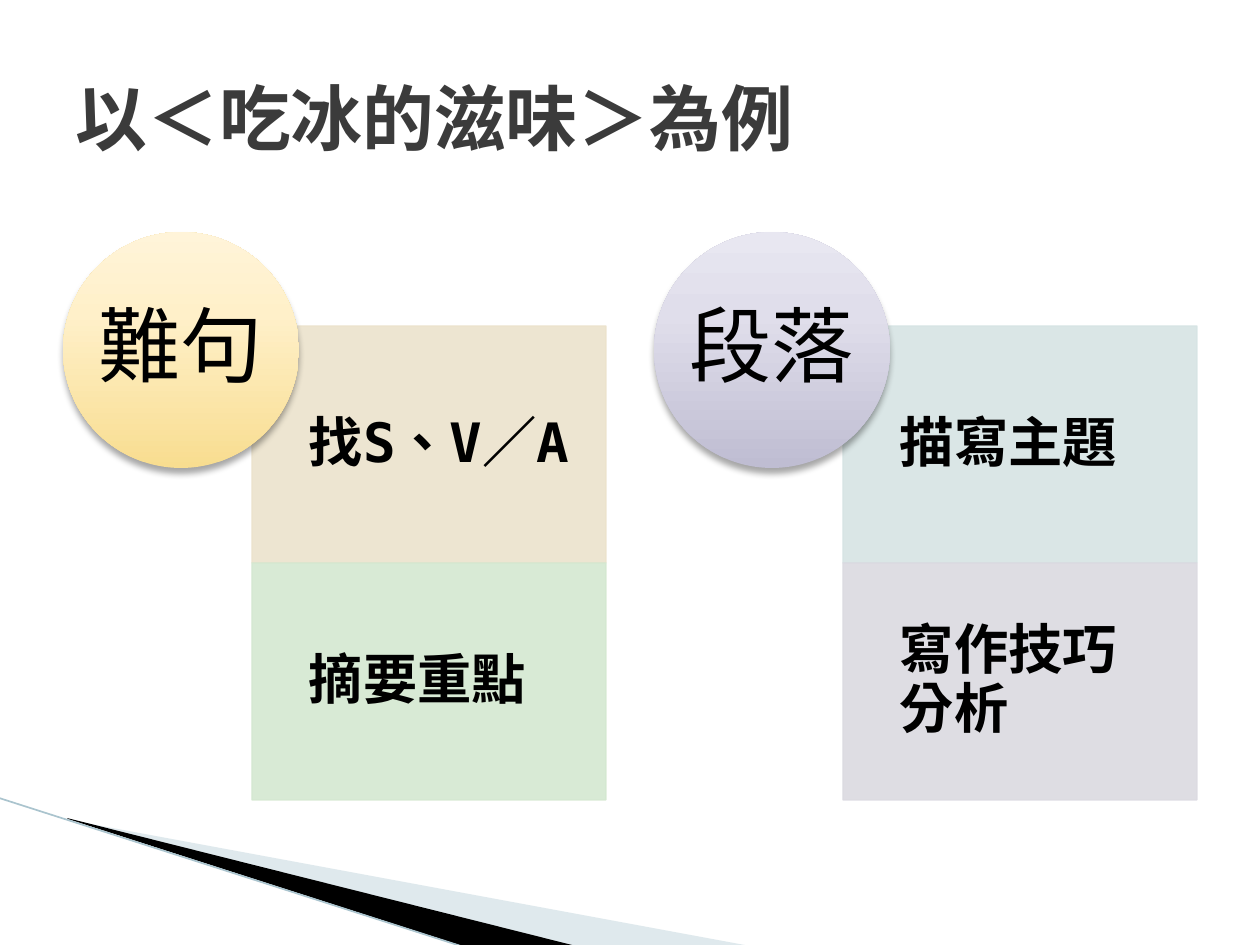
"""Build a slide that pairs two reading topics with their analysis steps."""
from copy import deepcopy

from lxml import etree
from pptx import Presentation
from pptx import util as u
from pptx.dml.color import RGBColor
from pptx.enum import lang, shapes, text
from pptx.oxml.ns import qn

TITLE = "以＜吃冰的滋味＞為例"
TOPICS = [
    {"name": "難句", "glow": ["F8DD90", "FFF0C9", "FFF4D9"],
     "steps": [("找S、V／A", "ECE3CC"), ("摘要重點", "D4E8D1")]},
    {"name": "段落", "glow": ["BFBDD2", "E0DEEB", "E8E7F1"],
     "steps": [("描寫主題", "D6E4E4"), ("寫作技巧分析", "DBDAE1")]},
]
WEDGES = [
    {"points": [(69, 820), (750, 946), (575, 946), (69, 819)], "color": "B1C9D2", "alpha": 40},
    {"points": [(67, 818), (576, 946), (469, 948), (68, 819)], "color": "000000", "alpha": 100},
]
EDGE = (-1, 798, 467, 948)
THEME = {
    "font": "DejaVu Sans Mono", "ink": "000000", "title_ink": "3B3B3B", "edge": "AAC4CE",
    "title": 41, "topic": 47, "step": 31, "step_alpha": 90, "glow_stops": (0, 0.65, 1),
}
PX = 914400 / 126
LEFT, PITCH = 63, 591
CIRCLE_TOP, CIRCLE = 232, 236
STEP_INDENT, STEP_TOP, STEP_WIDTH, STEP_HEIGHT = 189, 326, 354, 237


def px(*lengths):
    return [u.Emu(round(length * PX)) for length in lengths]


def paint(color_format, color, alpha=100):
    color_format.rgb = RGBColor.from_string(color)
    if alpha < 100:
        node = color_format._xFill.find(qn("a:srgbClr"))
        etree.SubElement(node, qn("a:alpha"), val=str(alpha * 1000))


def write(owner, wording, size, color, bold=False, align=text.PP_ALIGN.LEFT,
          insets=None, spacing=None):
    frame = owner.text_frame
    frame.text = wording
    frame.word_wrap = True
    frame.vertical_anchor = text.MSO_ANCHOR.MIDDLE
    if insets:
        sides = ("margin_left", "margin_top", "margin_right", "margin_bottom")
        for side, inset in zip(sides, px(*insets)):
            setattr(frame, side, inset)
    line = frame.paragraphs[0]
    line.alignment = align
    if spacing:
        line.line_spacing = spacing
        line.space_after = u.Pt(round(size * 0.35))
    font = line.runs[0].font
    style = {"name": THEME["font"], "size": u.Pt(size), "bold": bold,
             "language_id": lang.MSO_LANGUAGE_ID.TRADITIONAL_CHINESE}
    for key, value in style.items():
        setattr(font, key, value)
    font.color.rgb = RGBColor.from_string(color)


def solid(shape, color, alpha):
    shape.shadow.inherit = False
    shape.fill.solid()
    paint(shape.fill.fore_color, color, alpha)


def add_wedge(slide, points, color, alpha):
    start, *rest = points
    builder = slide.shapes.build_freeform(*start, scale=PX)
    builder.add_line_segments(rest, close=True)
    wedge = builder.convert_to_shape()
    solid(wedge, color, alpha)
    wedge.line.fill.background()


def add_edge(slide):
    edge = slide.shapes.add_connector(shapes.MSO_CONNECTOR.STRAIGHT, *px(*EDGE))
    edge.line.color.rgb = RGBColor.from_string(THEME["edge"])
    edge.line.width = u.Pt(0.95)
    etree.SubElement(edge._element.spPr, qn("a:effectLst"))


def add_step(slide, left, top, wording, color):
    box = slide.shapes.add_shape(
        shapes.MSO_SHAPE.RECTANGLE, *px(left, top, STEP_WIDTH, STEP_HEIGHT))
    solid(box, color, THEME["step_alpha"])
    box.line.width = u.Pt(0.75)
    box.line.fill.solid()
    box.line.color.rgb = RGBColor.from_string(color)
    outline = box._element.spPr.find(qn("a:ln")).find(".//" + qn("a:srgbClr"))
    etree.SubElement(outline, qn("a:alpha"), val=str(THEME["step_alpha"] * 1000))
    write(box, wording, THEME["step"], THEME["ink"], bold=True,
          insets=(57, 30, 30, 30), spacing=0.9)


def add_topic(slide, left, wording, glow):
    circle = slide.shapes.add_shape(
        shapes.MSO_SHAPE.OVAL, *px(left, CIRCLE_TOP, CIRCLE, CIRCLE))
    circle.line.fill.background()
    circle.fill.gradient()
    circle.fill.gradient_angle = 90
    properties = circle._element.spPr
    first = properties.find(".//" + qn("a:gs"))
    first.addnext(deepcopy(first))
    for stop, color, position in zip(circle.fill.gradient_stops, glow, THEME["glow_stops"]):
        stop.color.rgb = RGBColor.from_string(color)
        stop.position = position
    circle.shadow.inherit = False
    shadow = etree.SubElement(
        properties.find(qn("a:effectLst")), qn("a:outerShdw"), blurRad=str(u.Pt(4)),
        dist=str(u.Pt(3)), dir="5400000", rotWithShape="0")
    shade = etree.SubElement(shadow, qn("a:srgbClr"), val=THEME["ink"])
    etree.SubElement(shade, qn("a:alpha"), val="35000")
    write(circle, wording, THEME["topic"], THEME["ink"], align=text.PP_ALIGN.CENTER,
          insets=(0, 0, 0, 0), spacing=0.9)


def main():
    deck = Presentation()
    deck.slide_width, deck.slide_height = px(1260, 945)
    slide = deck.slides.add_slide(deck.slide_layouts[5])
    for wedge in WEDGES:
        add_wedge(slide, **wedge)
    add_edge(slide)
    for column, topic in enumerate(TOPICS):
        left = LEFT + column * PITCH
        for row, (wording, color) in enumerate(topic["steps"]):
            add_step(slide, left + STEP_INDENT, STEP_TOP + row * STEP_HEIGHT, wording, color)
        add_topic(slide, left, topic["name"], topic["glow"])
    title = slide.shapes.title
    title.left, title.top, title.width, title.height = px(63, 38, 1134, 158)
    write(title, TITLE, THEME["title"], THEME["title_ink"], bold=True)
    deck.save("out.pptx")


if __name__ == "__main__":
    main()
